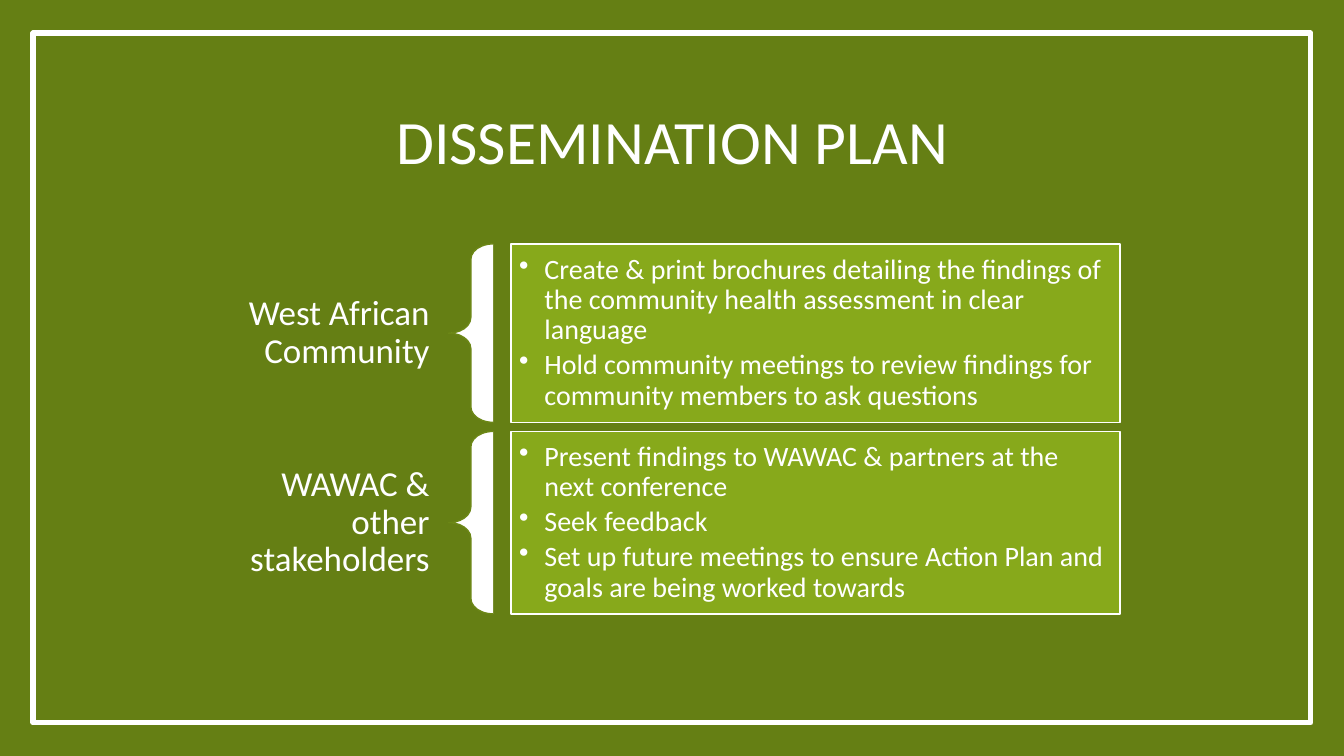
from dataclasses import dataclass

from lxml import etree
from pptx import Presentation
from pptx import util as u
from pptx.dml.color import RGBColor
from pptx.enum import shapes, text
from pptx.oxml import ns

# Content: audience, lines its label takes, height of its row, actions
HEADING = "DISSEMINATION PLAN"
AUDIENCES = [
    ("West African Community", 2, 1.77, [
        "Create & print brochures detailing the findings of the community "
        "health assessment in clear language",
        "Hold community meetings to review findings for community members "
        "to ask questions",
    ]),
    ("WAWAC & other stakeholders", 3, 1.81, [
        "Present findings to WAWAC & partners at the next conference",
        "Seek feedback",
        "Set up future meetings to ensure Action Plan and goals are being "
        "worked towards",
    ]),
]


@dataclass(frozen=True)
class Theme:
    font: str = "Calibri"
    background: str = "657F14"
    panel: str = "87A91B"
    brace_line: str = "6C8716"
    light: str = "FFFFFF"
    heading_size: float = 44
    label_size: float = 25
    action_size: float = 20
    line_spacing: float = 0.9


THEME = Theme()

# Grid in inches: (left, width) of each column
WIDTH, HEIGHT = 13.33, 7.5
MARGIN = 0.33
LABEL_COL, BRACE_COL, ACTION_COL = (2.23, 2.22), (4.45, 0.44), (5.07, 6.04)
FIRST_ROW, ROW_GAP = 2.42, 0.09
LABEL_LINE, LABEL_PADDING = 0.38, 0.15


def color(value):
    return RGBColor.from_string(value)


def add_box(slide, kind, bounds, fill, line, line_width):
    box = slide.shapes.add_shape(kind, *map(u.Inches, bounds))
    box.shadow.inherit = False
    if fill:
        box.fill.solid()
        box.fill.fore_color.rgb = color(fill)
    else:
        box.fill.background()
    box.line.color.rgb = color(line)
    box.line.width = u.Pt(line_width)
    return box


def write(frame, paragraphs, size, align, anchor, insets, bulleted=False):
    frame.word_wrap = True
    frame.vertical_anchor = anchor
    side, end = map(u.Inches, insets)
    frame.margin_left = frame.margin_right = side
    frame.margin_top = frame.margin_bottom = end
    for index, wording in enumerate(paragraphs):
        paragraph = frame.add_paragraph() if index else frame.paragraphs[0]
        paragraph.alignment = align
        paragraph.line_spacing = THEME.line_spacing
        if bulleted:
            paragraph.space_after = u.Pt(3.5)
            props = paragraph._p.get_or_add_pPr()
            props.set("marL", str(u.Inches(0.25)))
            props.set("indent", str(-u.Inches(0.25)))
            etree.SubElement(props, ns.qn("a:buChar")).set("char", "•")
        run = paragraph.add_run()
        run.text = wording
        run.font.name = THEME.font
        run.font.size = u.Pt(size)
        run.font.color.rgb = color(THEME.light)


def add_audience(slide, top, label, label_lines, height, actions):
    # Label, centred on its row
    label_height = LABEL_PADDING + LABEL_LINE * label_lines
    label_top = top + (height - label_height) / 2
    label_box = slide.shapes.add_textbox(*map(
        u.Inches, (LABEL_COL[0], label_top, LABEL_COL[1], label_height)))
    write(label_box.text_frame, [label], THEME.label_size,
          text.PP_ALIGN.RIGHT, text.MSO_ANCHOR.MIDDLE, (0.19, 0.07))

    # Brace
    brace = add_box(slide, shapes.MSO_SHAPE.LEFT_BRACE,
                    (BRACE_COL[0], top, BRACE_COL[1], height),
                    THEME.light, THEME.brace_line, 1)
    brace.adjustments[0] = 0.35
    brace.adjustments[1] = 0.5

    # Actions
    panel = add_box(slide, shapes.MSO_SHAPE.RECTANGLE,
                    (ACTION_COL[0], top, ACTION_COL[1], height),
                    THEME.panel, THEME.light, 1)
    write(panel.text_frame, actions, THEME.action_size, text.PP_ALIGN.LEFT,
          text.MSO_ANCHOR.MIDDLE, (0.08, 0.08), bulleted=True)


def main():
    deck = Presentation()
    deck.slide_width, deck.slide_height = u.Inches(WIDTH), u.Inches(HEIGHT)
    slide = deck.slides.add_slide(deck.slide_layouts[6])

    # Background and frame
    slide.background.fill.solid()
    slide.background.fill.fore_color.rgb = color(THEME.background)
    add_box(slide, shapes.MSO_SHAPE.RECTANGLE,
            (MARGIN, MARGIN, WIDTH - 2 * MARGIN, HEIGHT - 2 * MARGIN),
            None, THEME.light, 4)

    # Heading
    heading = slide.shapes.add_textbox(*map(u.Inches, (0.92, 0.78, 11.5, 1.03)))
    write(heading.text_frame, [HEADING], THEME.heading_size,
          text.PP_ALIGN.CENTER, text.MSO_ANCHOR.BOTTOM, (0.1, 0.05))

    # One row per audience
    top = FIRST_ROW
    for label, label_lines, height, actions in AUDIENCES:
        add_audience(slide, top, label, label_lines, height, actions)
        top += height + ROW_GAP

    deck.save("out.pptx")


if __name__ == "__main__":
    main()
